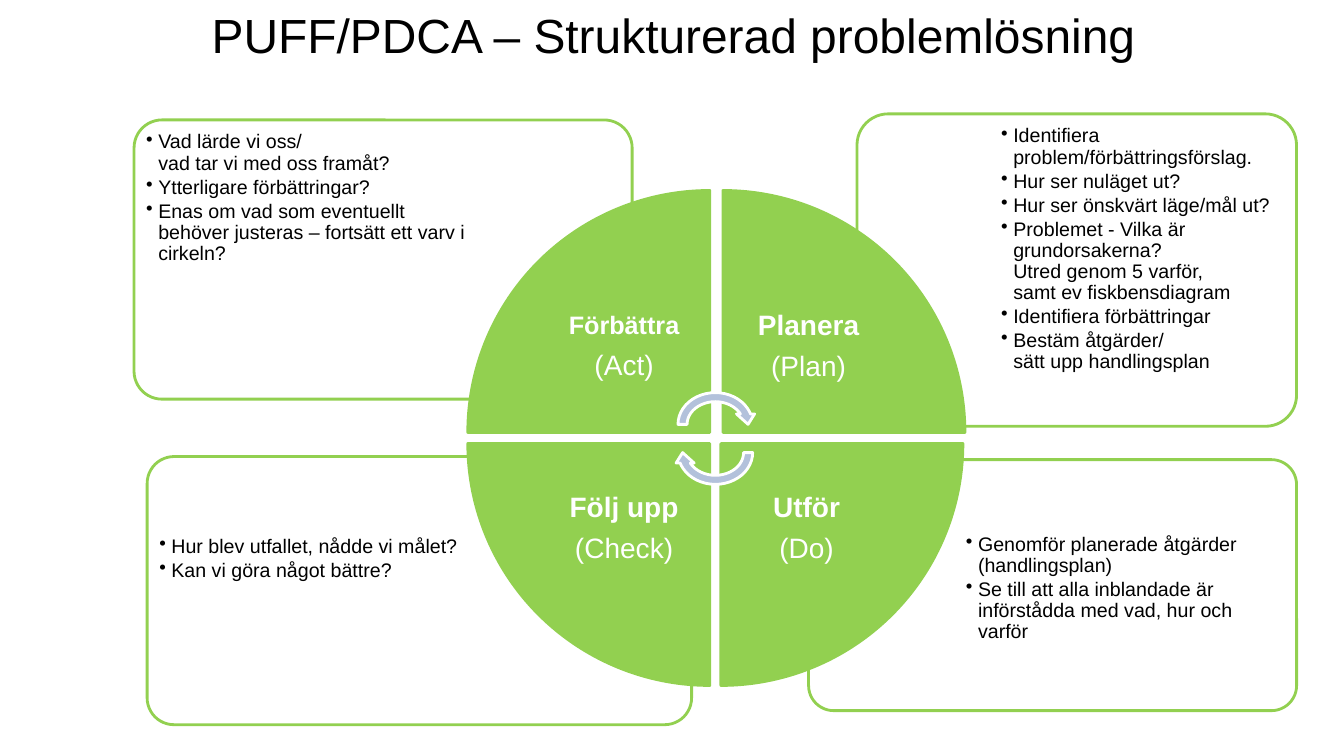
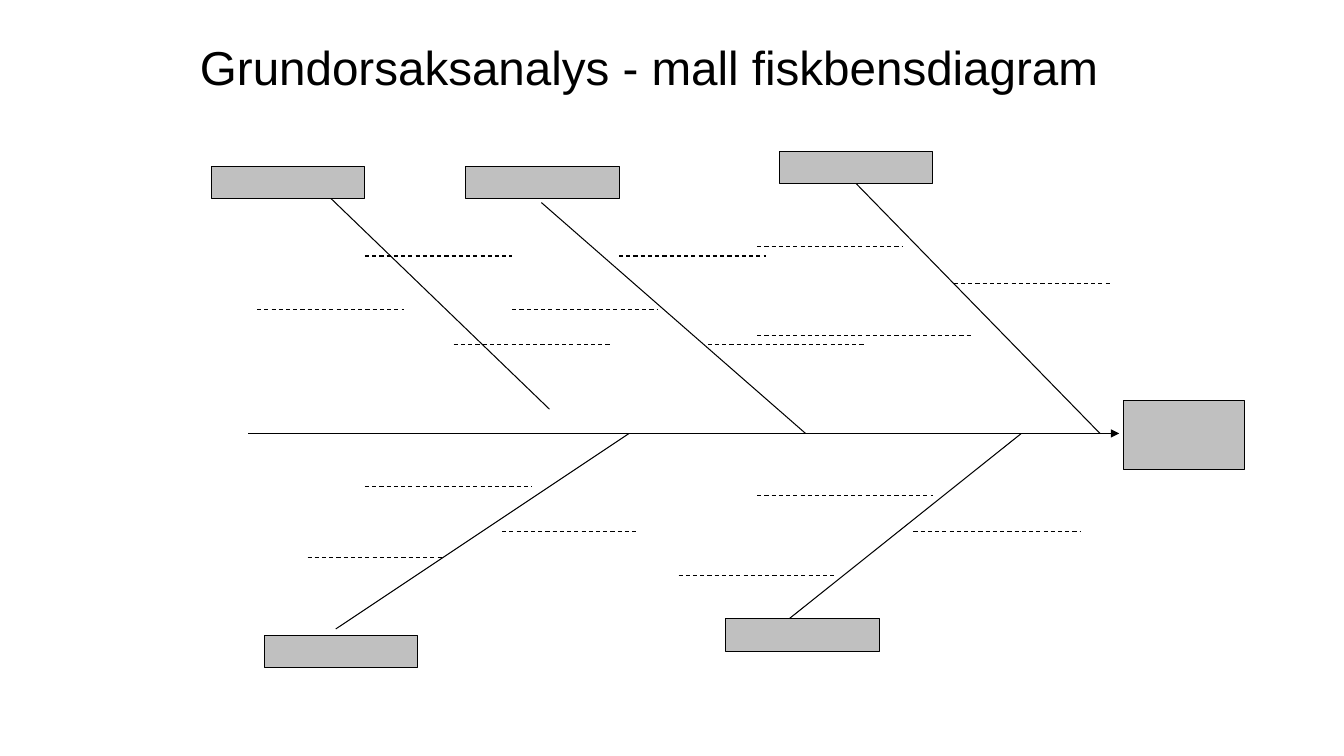
import pptx
import pptx.dml.color
import pptx.enum.dml
import pptx.enum.shapes
import pptx.enum.text
import pptx.oxml
import pptx.oxml.ns
import pptx.util
from pptx.util import Inches

RGBColor = pptx.dml.color.RGBColor
Pt = pptx.util.Pt
SHAPE = pptx.enum.shapes.MSO_SHAPE
ANCHOR = pptx.enum.text.MSO_ANCHOR
ALIGN = pptx.enum.text.PP_ALIGN
DASH = pptx.enum.dml.MSO_LINE.DASH

BLACK = RGBColor(0x00, 0x00, 0x00)
WHITE = RGBColor(0xFF, 0xFF, 0xFF)
GREEN = RGBColor(0x92, 0xD0, 0x50)
ARROW_BLUE = RGBColor(0xB3, 0xC1, 0xDB)
GREY = RGBColor(0xC0, 0xC0, 0xC0)


class Deck:
    """Holds the shared style and the slide being drawn."""

    font = "Arial"
    thin, thick = Pt(0.75), Pt(2)

    def __init__(self):
        self.presentation = pptx.Presentation()
        self.presentation.slide_width = Inches(13.33)
        self.presentation.slide_height = Inches(7.5)

    def new_slide(self):
        blank = self.presentation.slide_layouts[6]
        self.shapes = self.presentation.slides.add_slide(blank).shapes

    def text_frame(self, left, top, width, height, inset, anchor):
        frame = self.shapes.add_textbox(
            Inches(left), Inches(top), Inches(width), Inches(height)).text_frame
        frame.word_wrap = True
        frame.vertical_anchor = anchor
        frame.margin_left = frame.margin_right = Inches(inset)
        frame.margin_top = frame.margin_bottom = Inches(inset)
        return frame

    def style(self, paragraph, size, color, bold=False):
        paragraph.font.name = self.font
        paragraph.font.size = Pt(size)
        paragraph.font.color.rgb = color
        paragraph.font.bold = bold

    def title(self, text, left, width, bottom, size, align):
        frame = self.text_frame(left, 0, width, bottom, 0, ANCHOR.BOTTOM)
        paragraph = frame.paragraphs[0]
        paragraph.text = text
        paragraph.alignment = align
        self.style(paragraph, size, BLACK)

    def shape(self, kind, left, top, width, height, fill, line, weight, rotation=0):
        shape = self.shapes.add_shape(
            kind, Inches(left), Inches(top), Inches(width), Inches(height))
        shape.shadow.inherit = False
        shape.fill.solid()
        shape.fill.fore_color.rgb = fill
        shape.line.color.rgb = line
        shape.line.width = weight
        shape.rotation = rotation
        return shape

    def panel(self, left, top, width, height):
        panel = self.shape(SHAPE.ROUNDED_RECTANGLE, left, top, width, height,
                           WHITE, GREEN, self.thick)
        panel.adjustments[0] = 0.1

    def bullets(self, items, left, top, width, height):
        frame = self.text_frame(left, top, width, height, 0.06, ANCHOR.TOP)
        for index, item in enumerate(items):
            paragraph = frame.add_paragraph() if index else frame.paragraphs[0]
            paragraph.text = item
            paragraph.line_spacing = 0.9
            paragraph.space_after = Pt(2)
            properties = paragraph._p.get_or_add_pPr()
            properties.set("marL", str(Inches(0.12)))
            properties.set("indent", str(-Inches(0.12)))
            bullet = pptx.oxml.parse_xml(
                f'<a:buChar {pptx.oxml.ns.nsdecls("a")} char="•"/>')
            properties.append(bullet)
            self.style(paragraph, 14, BLACK)

    def wedge_label(self, name, step, left, top, side, name_size):
        frame = self.text_frame(left, top, side, side, 0.16, ANCHOR.MIDDLE)
        heading, detail = frame.paragraphs[0], frame.add_paragraph()
        heading.text, detail.text = name, step
        self.style(heading, name_size, WHITE, bold=True)
        self.style(detail, 20, WHITE)
        for paragraph in frame.paragraphs:
            paragraph.alignment = ALIGN.CENTER
            paragraph.line_spacing = 0.9
            paragraph.space_after = Pt(8)

    def line(self, x1, y1, x2, y2, dash=None, arrow=False):
        connector = self.shapes.add_connector(
            pptx.enum.shapes.MSO_CONNECTOR.STRAIGHT,
            Inches(x1), Inches(y1), Inches(x2), Inches(y2))
        connector.line.color.rgb = BLACK
        connector.line.width = self.thin
        if dash:
            connector.line.dash_style = dash
        properties = connector._element.spPr
        namespace = pptx.oxml.ns.nsdecls("a")
        if arrow:
            properties.find(pptx.oxml.ns.qn("a:ln")).append(
                pptx.oxml.parse_xml(f'<a:tailEnd {namespace} type="triangle"/>'))
        properties.append(pptx.oxml.parse_xml(f"<a:effectLst {namespace}/>"))

    def cause_box(self, left, top, width=1.52, height=0.32):
        self.shape(SHAPE.RECTANGLE, left, top, width, height, GREY, BLACK, self.thin)


# Each panel: its frame, the place of its text, its bullets
PANELS = [
    ((8.02, 4.56, 4.84, 2.49), (9.52, 5.24, 3.28, 1.76), [
        "Genomför planerade åtgärder (handlingsplan)",
        "Se till att alla inblandade är införstådda med vad, hur och varför",
    ]),
    ((1.46, 4.53, 5.4, 2.66), (1.52, 5.26, 3.66, 1.88), [
        "Hur blev utfallet, nådde vi målet?",
        "Kan vi göra något bättre?",
    ]),
    ((8.5, 1.13, 4.36, 3.1), (9.87, 1.19, 2.92, 2.19), [
        "Identifiera problem/förbättringsförslag.",
        "Hur ser nuläget ut?",
        "Hur ser önskvärt läge/mål ut?",
        "Problemet - Vilka är grundorsakerna?\nUtred genom 5 varför,\n"
        "samt ev fiskbensdiagram",
        "Identifiera förbättringar",
        "Bestäm åtgärder/\nsätt upp handlingsplan",
    ]),
    ((1.33, 1.19, 4.94, 2.77), (1.39, 1.25, 3.33, 1.95), [
        "Vad lärde vi oss/\nvad tar vi med oss framåt?",
        "Ytterligare förbättringar?",
        "Enas om vad som eventuellt behöver justeras – fortsätt ett varv i cirkeln?",
    ]),
]

# Clockwise from upper left: name, step, name size, left, top
WEDGES = [
    ("Förbättra", "(Act)", 18, 4.64, 1.89),
    ("Planera", "(Plan)", 20, 7.17, 1.89),
    ("Utför", "(Do)", 20, 7.15, 4.4),
    ("Följ upp", "(Check)", 20, 4.64, 4.4),
]
WEDGE_SIDE, LABEL_SIDE = 2.4, 1.7

SPINE_Y = 4.3
# Each bone: outer end, then where it ends near the spine
BONES = [
    (3.2, 1.89, 5.45, 4.06),
    (5.37, 2.01, 7.99, SPINE_Y),
    (8.49, 1.82, 10.91, SPINE_Y),
    (3.33, 6.24, 6.24, SPINE_Y),
    (7.7, 6.24, 10.13, SPINE_Y),
]
# Each dashed cause line: left, right, height on the slide
CAUSES = [
    (3.62, 5.08, 2.54), (2.55, 4.01, 3.07), (4.5, 6.05, 3.42),
    (6.14, 7.6, 2.54), (5.08, 6.53, 3.07), (7.02, 8.57, 3.42),
    (7.51, 8.96, 2.45), (9.46, 11.02, 2.81), (7.51, 9.64, 3.33),
    (3.62, 5.27, 4.83), (4.98, 6.34, 5.27), (3.05, 4.41, 5.53),
    (7.51, 9.25, 4.92), (9.06, 10.71, 5.27), (6.73, 8.28, 5.71),
]
CAUSE_BOXES = [(2.1, 1.65), (4.62, 1.65), (7.73, 1.5), (2.62, 6.3), (7.2, 6.14)]


def draw_cycle(deck):
    deck.new_slide()
    deck.title("PUFF/PDCA – Strukturerad problemlösning", 2.1, 9.75, 0.63, 34.2, ALIGN.LEFT)
    for frame, text_place, items in PANELS:
        deck.panel(*frame)
        deck.bullets(items, *text_place)
    inward = WEDGE_SIDE - LABEL_SIDE
    for turn, (name, step, size, left, top) in enumerate(WEDGES):
        deck.shape(SHAPE.PIE_WEDGE, left, top, WEDGE_SIDE, WEDGE_SIDE,
                   GREEN, GREEN, deck.thick, 90 * turn)
        label_left = left + (inward if turn in (0, 3) else 0)
        label_top = top + (inward if turn < 2 else 0)
        deck.wedge_label(name, step, label_left, label_top, LABEL_SIDE, size)
    for top, rotation in ((3.85, 0), (4.13, 180)):
        deck.shape(SHAPE.CIRCULAR_ARROW, 6.68, top, 0.83, 0.72,
                   ARROW_BLUE, WHITE, deck.thick, rotation)


def draw_fishbone(deck):
    deck.new_slide()
    deck.title("Grundorsaksanalys - mall fiskbensdiagram", 1.72, 9.44, 0.94, 34, ALIGN.CENTER)
    deck.line(2.46, SPINE_Y, 11.1, SPINE_Y, arrow=True)
    for bone in BONES:
        deck.line(*bone)
    for left, right, y in CAUSES:
        deck.line(left, y, right, y, dash=DASH)
    for left, top in CAUSE_BOXES:
        deck.cause_box(left, top)
    deck.cause_box(11.14, 3.97, 1.2, 0.69)


def main():
    deck = Deck()
    draw_cycle(deck)
    draw_fishbone(deck)
    deck.presentation.save("out.pptx")


if __name__ == "__main__":
    main()
